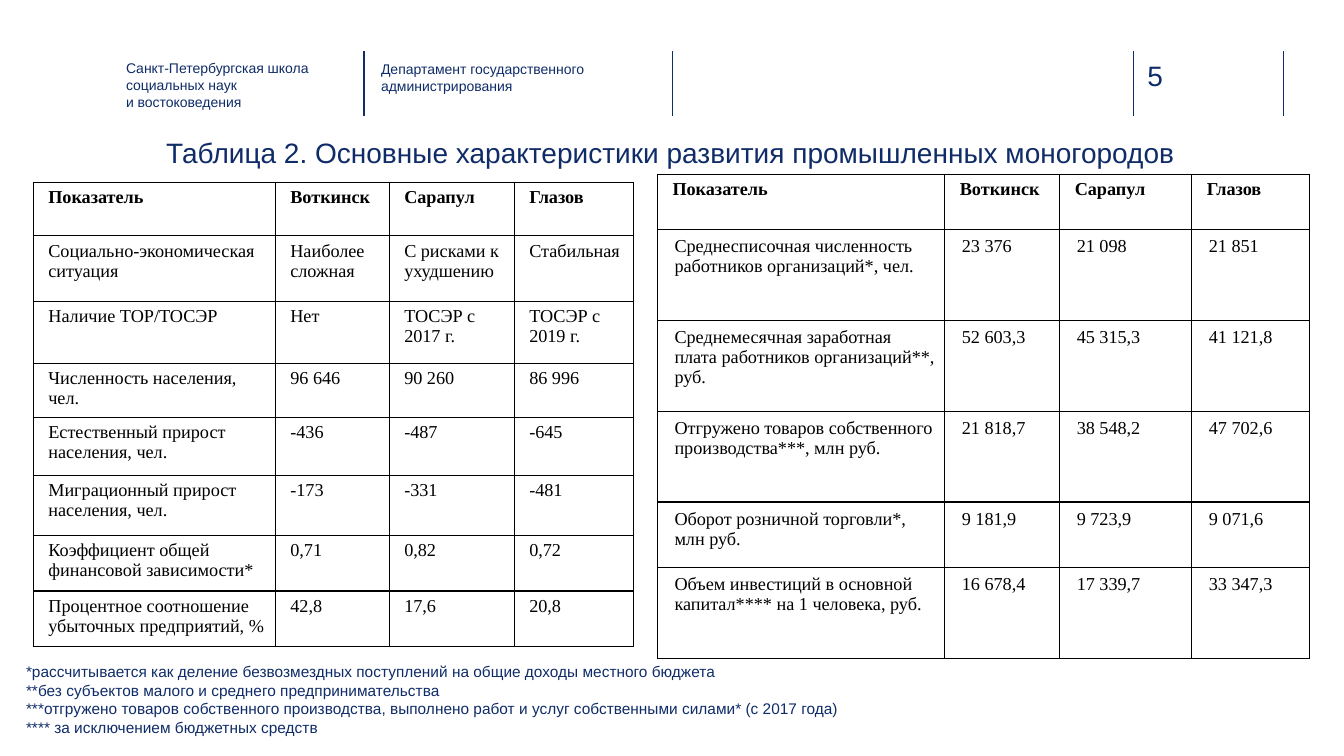
from dataclasses import dataclass

import lxml.etree
import pptx
import pptx.dml.color
import pptx.enum.shapes
import pptx.enum.text
import pptx.oxml.ns
import pptx.slide
import pptx.text.text
import pptx.util

Inches = pptx.util.Inches
qualified = pptx.oxml.ns.qn


@dataclass(frozen=True)
class Theme:
    """Colours, fonts and type sizes of the slide."""
    navy: str = "0F2C68"
    rule: str = "102D69"
    black: str = "000000"
    sans: str = "Arial"
    serif: str = "Times New Roman"
    header_size: int = 10
    note_size: int = 11
    table_size: int = 13
    title_size: int = 20
    border: float = 0.95


@dataclass(frozen=True)
class Label:
    """A text box whose inner tuples are paragraphs made of lines."""
    box: tuple[float, float, float, float]
    paragraphs: tuple[tuple[str, ...], ...]
    size: int
    inset_x: float = 0
    inset_y: float = 0
    justified: bool = False


@dataclass(frozen=True)
class Indicators:
    """A table of indicators by town."""
    left: float
    top: float
    widths: tuple[float, ...]
    heights: tuple[float, ...]
    body_inset: float
    rows: tuple[tuple[str, ...], ...]


THEME = Theme()
HEADINGS = ("Показатель", "Воткинск", "Сарапул", "Глазов")
HEADING_INSET = 0.05
RULE_POSITIONS = (3.61, 6.67, 11.24, 12.73)
RULE_TOP, RULE_BOTTOM = 0.51, 1.15

LABELS = (
    Label((11.38, 0.58, 0.73, 0.34), (("5",),), THEME.title_size),
    Label((1.25, 0.59, 2.08, 0.45),
          (("Санкт-Петербургская школа социальных наук", "и востоковедения"),),
          THEME.header_size),
    Label((3.78, 0.6, 2.26, 0.45),
          (("Департамент государственного администрирования",),), THEME.header_size),
    Label((1.05, 1.08, 11.58, 0.71),
          (("Таблица 2. Основные характеристики развития промышленных моногородов",),),
          THEME.title_size, 0.1, 0.1, True),
    Label((0.16, 6.52, 10.96, 0.95),
          (("*рассчитывается как деление безвозмездных поступлений на общие доходы местного бюджета",),
           ("**без субъектов малого и среднего предпринимательства",
            "***отгружено товаров собственного производства, выполнено работ и услуг "
            "собственными силами* (с 2017 года)",
            "**** за исключением бюджетных средств")),
          THEME.note_size, 0.1, 0.05),
)

TABLES = (
    Indicators(0.33, 1.81, (2.4, 1.13, 1.24, 1.18),
               (0.53, 0.65, 0.62, 0.53, 0.57, 0.6, 0.55, 0.55), 0.05, (
        ("Социально-экономическая ситуация", "Наиболее сложная",
         "С рисками к ухудшению", "Стабильная"),
        ("Наличие ТОР/ТОСЭР", "Нет", "ТОСЭР с 2017 г.", "ТОСЭР с 2019 г."),
        ("Численность населения, чел.", "96 646", "90 260", "86 996"),
        ("Естественный прирост населения, чел.", "-436", "-487", "-645"),
        ("Миграционный прирост населения, чел.", "-173", "-331", "-481"),
        ("Коэффициент общей финансовой зависимости*", "0,71", "0,82", "0,72"),
        ("Процентное соотношение убыточных предприятий, %", "42,8", "17,6", "20,8"),
    )),
    Indicators(6.52, 1.73, (2.85, 1.14, 1.31, 1.17),
               (0.55, 0.9, 0.9, 0.9, 0.65, 0.9), 0.07, (
        ("Среднесписочная численность работников организаций*, чел.",
         "23 376", "21 098", "21 851"),
        ("Среднемесячная заработная плата работников организаций**, руб.",
         "52 603,3", "45 315,3", "41 121,8"),
        ("Отгружено товаров собственного производства***, млн руб.",
         "21 818,7", "38 548,2", "47 702,6"),
        ("Оборот розничной торговли*, млн руб.", "9 181,9", "9 723,9", "9 071,6"),
        ("Объем инвестиций в основной капитал**** на 1 человека, руб.",
         "16 678,4", "17 339,7", "33 347,3"),
    )),
)


def add_run(paragraph: pptx.text.text._Paragraph, text: str, size: int,
            font: str, colour: str, bold: bool = False) -> None:
    """Append a formatted run."""
    run = paragraph.add_run()
    run.text = text
    run.font.size = pptx.util.Pt(size)
    run.font.name = font
    run.font.bold = bold
    run.font.color.rgb = pptx.dml.color.RGBColor.from_string(colour)


def set_indent(paragraph: pptx.text.text._Paragraph, left: float, first: float) -> None:
    """Set the left margin and first-line indent."""
    properties = paragraph._p.get_or_add_pPr()
    properties.set("marL", str(Inches(left)))
    properties.set("indent", str(Inches(first)))


def add_rule(slide: pptx.slide.Slide, left: float) -> None:
    """Draw one vertical header rule."""
    rule = slide.shapes.add_connector(
        pptx.enum.shapes.MSO_CONNECTOR.STRAIGHT,
        Inches(left), Inches(RULE_TOP), Inches(left), Inches(RULE_BOTTOM))
    rule.line.color.rgb = pptx.dml.color.RGBColor.from_string(THEME.rule)
    rule.line.width = pptx.util.Pt(1)
    lxml.etree.SubElement(rule._element.spPr, qualified("a:effectLst"))


def add_label(slide: pptx.slide.Slide, label: Label) -> None:
    """Draw one text box."""
    frame = slide.shapes.add_textbox(*map(Inches, label.box)).text_frame
    frame.word_wrap = True
    frame.margin_left = frame.margin_right = Inches(label.inset_x)
    frame.margin_top = frame.margin_bottom = Inches(label.inset_y)
    for index, lines in enumerate(label.paragraphs):
        paragraph = frame.add_paragraph() if index else frame.paragraphs[0]
        if label.justified:
            paragraph.alignment = pptx.enum.text.PP_ALIGN.JUSTIFY
            paragraph.line_spacing = 1.5
            set_indent(paragraph, 0.11, 0.39)
        for line_index, line in enumerate(lines):
            if line_index:
                paragraph.add_line_break()
            add_run(paragraph, line, label.size, THEME.sans, THEME.navy)


def add_borders(cell: pptx.table._Cell) -> None:
    """Outline a cell on all four sides."""
    properties = cell._tc.get_or_add_tcPr()
    for index, side in enumerate(("lnL", "lnR", "lnT", "lnB")):
        border = lxml.etree.Element(qualified(f"a:{side}"), w=str(pptx.util.Pt(THEME.border)))
        fill = lxml.etree.SubElement(border, qualified("a:solidFill"))
        lxml.etree.SubElement(fill, qualified("a:srgbClr"), val=THEME.black)
        properties.insert(index, border)


def add_indicators(slide: pptx.slide.Slide, indicators: Indicators) -> None:
    """Draw one bordered table."""
    rows = (HEADINGS, *indicators.rows)
    table = slide.shapes.add_table(
        len(rows), len(HEADINGS), Inches(indicators.left), Inches(indicators.top),
        Inches(sum(indicators.widths)), Inches(sum(indicators.heights))).table
    table.first_row = table.horz_banding = False
    for column, width in zip(table.columns, indicators.widths):
        column.width = Inches(width)
    for row_index, texts in enumerate(rows):
        table.rows[row_index].height = Inches(indicators.heights[row_index])
        inset = Inches(indicators.body_inset if row_index else HEADING_INSET)
        for column_index, text in enumerate(texts):
            cell = table.cell(row_index, column_index)
            cell.margin_left = cell.margin_right = inset
            cell.margin_top = cell.margin_bottom = inset
            cell.fill.background()
            add_borders(cell)
            paragraph = cell.text_frame.paragraphs[0]
            set_indent(paragraph, 0.1, 0)
            add_run(paragraph, text, THEME.table_size, THEME.serif, THEME.black, row_index == 0)


def main() -> None:
    """Build and save the slide."""
    presentation = pptx.Presentation()
    presentation.slide_width = Inches(13.33)
    presentation.slide_height = Inches(7.5)
    slide = presentation.slides.add_slide(presentation.slide_layouts[6])
    for left in RULE_POSITIONS:
        add_rule(slide, left)
    for label in LABELS:
        add_label(slide, label)
    for indicators in TABLES:
        add_indicators(slide, indicators)
    presentation.save("out.pptx")


if __name__ == "__main__":
    main()
